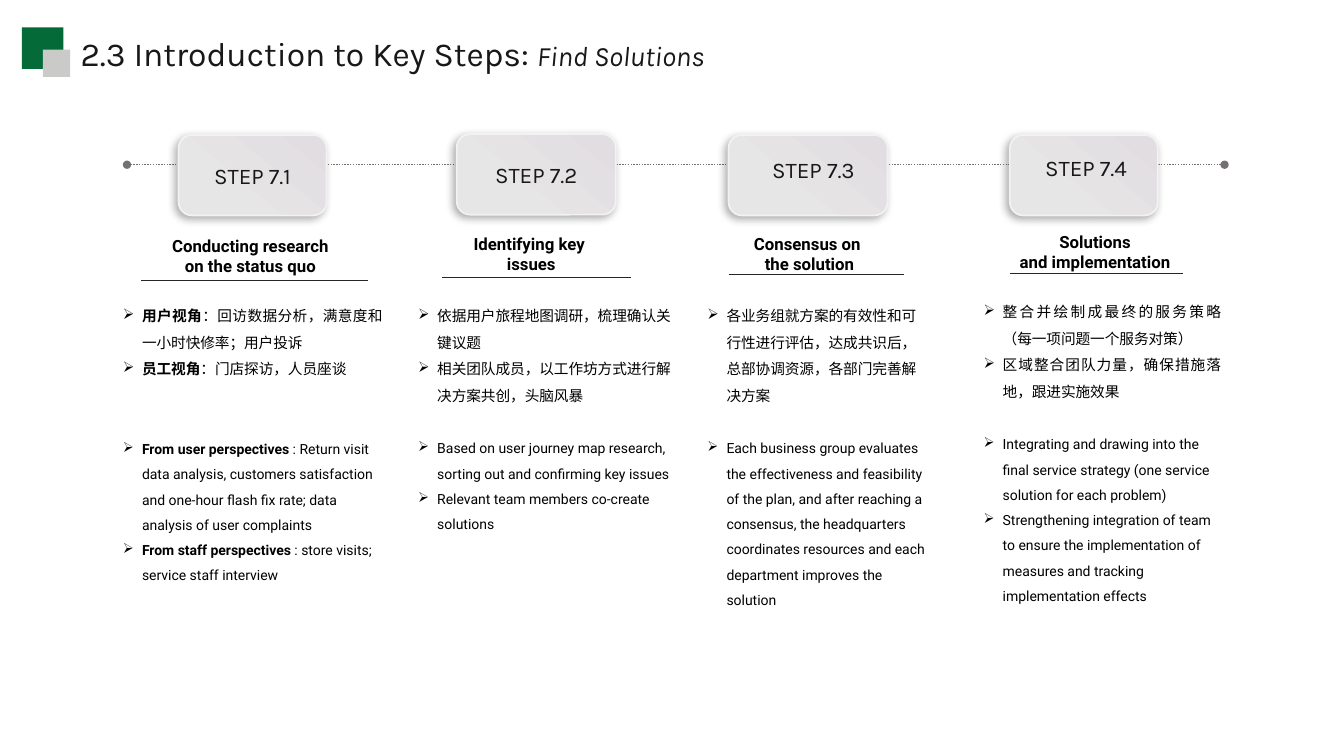
import pptx
import pptx.util
import pptx.oxml
import pptx.oxml.ns
import pptx.dml.color
import pptx.enum.dml
import pptx.enum.shapes
import pptx.enum.text
from dataclasses import dataclass
from lxml import etree

Cm, Pt = pptx.util.Cm, pptx.util.Pt
RGB = pptx.dml.color.RGBColor.from_string
ALIGN = pptx.enum.text.PP_ALIGN
ANCHOR = pptx.enum.text.MSO_ANCHOR
SHAPE = pptx.enum.shapes.MSO_SHAPE
STRAIGHT = pptx.enum.shapes.MSO_CONNECTOR.STRAIGHT


@dataclass(frozen=True)
class Theme:
    green: str = "046A38"
    grey: str = "CACAC8"
    ink: str = "181818"
    black: str = "000000"
    rule: str = "262626"
    track: str = "767171"
    card_dark: str = "E2DDE1"
    card_light: str = "E6E6E6"
    card_edge: str = "F2F2F2"
    display: str = "Karla"
    text: str = "Roboto"
    title: float = 24
    subtitle: float = 20
    step: float = 16
    heading: float = 12
    chinese: float = 10.5
    english: float = 10


theme = Theme()


def add_xml(parent, tag, **attrs):
    el = etree.SubElement(parent, pptx.oxml.ns.qn(tag))
    for name, value in attrs.items():
        el.set(name, str(value))
    return el


def add_run(p, text, size, font=theme.text, color=theme.black, bold=False, italic=False):
    r = p.add_run()
    r.text = text
    r.font.name, r.font.size = font, Pt(size)
    r.font.bold, r.font.italic = bold, italic
    r.font.color.rgb = RGB(color)


steps = [
    dict(name="STEP 7.1", card=(4.5, 3.4, 3.73, 2.03), label=None,
         heading=["Conducting research ", "on the status quo "],
         heading_at=(2.49, 5.51, 7.75, 1.52), rule=(3.56, 9.27, 7.06),
         body_at=(3.1, 7.52, 6.55, 10.82), gap=39, justify=True,
         chinese=[("用户视角", "：回访数据分析，满意度和一小时快修率；用户投诉"),
                  ("员工视角", "：门店探访，人员座谈")],
         english=[("From user perspectives ", ": Return visit data analysis, customers satisfaction "
                   "and one-hour flash fix rate; data analysis of user complaints"),
                  ("From staff perspectives ", ": store visits; service staff interview")]),
    dict(name="STEP 7.2", card=(11.51, 3.38, 4.01, 2.03), label=None,
         heading=["Identifying key ", "issues"],
         heading_at=(9.96, 5.74, 6.86, 1.24), rule=(11.15, 15.9, 6.99),
         body_at=(10.54, 7.52, 6.43, 8.33), gap=19.5, justify=False,
         chinese=[("", "依据用户旅程地图调研，梳理确认关键议题"),
                  ("", "相关团队成员，以工作坊方式进行解决方案共创，头脑风暴")],
         english=[("", "Based on user journey map research, sorting out and confirming key issues"),
                  ("", "Relevant team members co-create solutions")]),
    dict(name="STEP 7.3", card=(18.36, 3.4, 4.01, 2.03), label=(18.11, 3.81, 4.78, 0.94),
         heading=["Consensus on ", "the solution"],
         heading_at=(16.97, 5.74, 6.86, 1.24), rule=(18.36, 22.78, 6.91),
         body_at=(17.83, 7.52, 5.49, 9.7), gap=19.5, justify=False,
         chinese=[("", "各业务组就方案的有效性和可行性进行评估，达成共识后，总部协调资源，各部门完善解决方案")],
         english=[("", "Each business group evaluates the effectiveness and feasibility of the plan, "
                   "and after reaching a consensus, the headquarters coordinates resources "
                   "and each department improves the solution")]),
    dict(name="STEP 7.4", card=(25.45, 3.4, 3.73, 2.03), label=(25.2, 3.76, 4.34, 0.94),
         heading=["Solutions ", "and implementation "],
         heading_at=(25.2, 5.69, 4.9, 1.24), rule=(25.45, 29.82, 6.88),
         body_at=(24.79, 7.42, 5.99, 10.44), gap=19.5, justify=True,
         chinese=[("", "整合并绘制成最终的服务策略（每一项问题一个服务对策）"),
                  ("", "区域整合团队力量，确保措施落地，跟进实施效果")],
         english=[("", "Integrating and drawing into the final service strategy "
                   "(one service solution for each problem)"),
                  ("", "Strengthening integration of team to ensure the implementation of measures "
                   "and tracking implementation effects")]),
]

prs = pptx.Presentation()
prs.slide_width, prs.slide_height = Cm(33.87), Cm(19.05)
s = prs.slides.add_slide(prs.slide_layouts[6])

for color, x, y, side in [(theme.green, 0.55, 0.69, 1.05), (theme.grey, 1.08, 1.25, 0.69)]:
    sp = s.shapes.add_shape(SHAPE.RECTANGLE, Cm(x), Cm(y), Cm(side), Cm(side))
    sp.shadow.inherit = False
    sp.fill.solid()
    sp.fill.fore_color.rgb = RGB(color)
    sp.line.fill.background()

tf = s.shapes.add_textbox(Cm(1.78), Cm(0.71), Cm(26.26), Cm(2.69)).text_frame
tf.word_wrap = True
p = tf.paragraphs[0]
add_run(p, "2.3 Introduction to Key Steps: ", theme.title, theme.display, theme.ink)
add_run(p, "Find Solutions", theme.subtitle, theme.display, theme.ink, italic=True)

track = s.shapes.add_connector(STRAIGHT, Cm(3.2), Cm(4.15), Cm(30.86), Cm(4.15))
track.line.color.rgb = RGB(theme.track)
track.line.width = Pt(1)
track.line.dash_style = pptx.enum.dml.MSO_LINE.ROUND_DOT
for end in ("a:headEnd", "a:tailEnd"):
    add_xml(track.line._get_or_add_ln(), end, type="oval")
add_xml(track._element.spPr, "a:effectLst")

for step in steps:
    card = s.shapes.add_shape(SHAPE.ROUNDED_RECTANGLE, *map(Cm, step["card"]))
    card.fill.gradient()
    card.fill.gradient_angle = 230
    stops = zip(card.fill.gradient_stops, (theme.card_dark, theme.card_light), (0, 0.76))
    for stop, color, position in stops:
        stop.color.rgb = RGB(color)
        stop.position = position
    card.line.color.rgb = RGB(theme.card_edge)
    card.line.width = Pt(1.25)
    card.shadow.inherit = False
    effects = card._element.spPr.find(pptx.oxml.ns.qn("a:effectLst"))
    shadow = add_xml(effects, "a:outerShdw", blurRad=Pt(6), dist=Pt(3), dir=135 * 60000,
                     algn="tr", rotWithShape=0)
    add_xml(add_xml(shadow, "a:srgbClr", val=theme.black), "a:alpha", val=32000)

    holder = s.shapes.add_textbox(*map(Cm, step["label"])) if step["label"] else card
    tf = holder.text_frame
    tf.word_wrap = True
    p = tf.paragraphs[0]
    p.alignment = ALIGN.CENTER
    add_run(p, step["name"], theme.step, theme.display, theme.ink)

    tf = s.shapes.add_textbox(*map(Cm, step["heading_at"])).text_frame
    tf.word_wrap = False
    tf.vertical_anchor = ANCHOR.BOTTOM
    tf.margin_left = tf.margin_right = Cm(0.13)
    tf.margin_top = tf.margin_bottom = Cm(0.08)
    for i, line in enumerate(step["heading"]):
        p = tf.add_paragraph() if i else tf.paragraphs[0]
        p.alignment = ALIGN.CENTER
        add_run(p, line, theme.heading, bold=True)

    left, right, y = map(Cm, step["rule"])
    rule = s.shapes.add_connector(STRAIGHT, left, y, right, y)
    rule.line.color.rgb = RGB(theme.rule)
    rule.line.width = Pt(0.5)
    add_xml(rule._element.spPr, "a:effectLst")

    tf = s.shapes.add_textbox(*map(Cm, step["body_at"])).text_frame
    tf.word_wrap = True
    tf.margin_left = tf.margin_right = tf.margin_top = tf.margin_bottom = 0
    for i, (lead, text) in enumerate(step["chinese"] + step["english"]):
        in_chinese = i < len(step["chinese"])
        size = theme.chinese if in_chinese else theme.english
        p = tf.add_paragraph() if i else tf.paragraphs[0]
        p.alignment = ALIGN.JUSTIFY if in_chinese and step["justify"] else ALIGN.LEFT
        p.line_spacing = 1.5
        if i == len(step["chinese"]):
            p.space_before = Pt(step["gap"])
        pPr = p._p.get_or_add_pPr()
        pPr.set("marL", str(Cm(0.48)))
        pPr.set("indent", str(-Cm(0.48)))
        add_xml(pPr, "a:buChar", char="➢")
        if lead:
            add_run(p, lead, size, bold=True)
        add_run(p, text, size)

prs.save("out.pptx")
